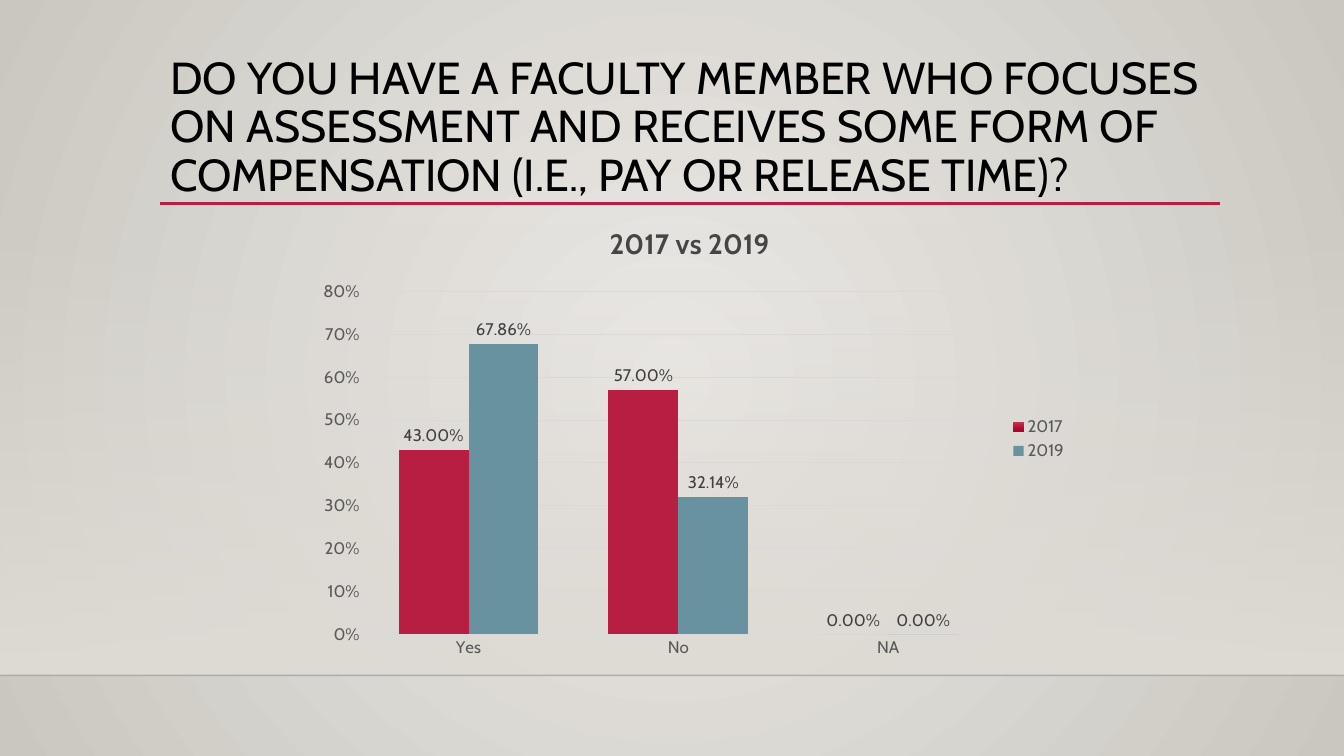
import pptx
import pptx.chart.data
import pptx.dml.color
import pptx.enum.chart
import pptx.enum.shapes
import pptx.enum.text
import pptx.oxml
import pptx.oxml.ns
import pptx.util
from pptx.util import Inches, Pt

QUESTION = ("DO YOU HAVE A FACULTY MEMBER WHO FOCUSES ON ASSESSMENT AND RECEIVES "
            "SOME FORM OF COMPENSATION (I.E., PAY OR RELEASE TIME)?")
CHART_TITLE = "2017 vs 2019"
ANSWERS = ["Yes", "No", "NA"]
SHARES = {"2017": [0.43, 0.57, 0], "2019": [0.6786, 0.3214, 0]}
FONT = "Cabin"
COLORS = {
    "red": "B71E42", "teal": "6892A0", "stone": "CCC6BC",
    "black": "000000", "heading": "454545", "axis": "595959",
    "label": "404040", "grid": "D9D9D9", "floor": "000001",
}
BACKDROP_STOPS = [(0, "ECEAE7", 100), (100, "CAC7C1", 100)]
BAND_STOPS = [(0, "DFDBD5", 0), (100, "DFDBD5", 100)]
RED_STOPS = [(0, "C7304C", 100), (69, "B3062F", 100), (100, "AA062C", 100)]
DOWNWARD = '<a:lin ang="5400000" scaled="0"/>'
RADIAL = ('<a:path path="circle"><a:fillToRect l="50000" t="50000" '
          'r="50000" b="50000"/></a:path>')
PLOT_AREA = {"x": 0.08, "y": 0.187, "w": 0.811, "h": 0.728}
NS = pptx.oxml.ns.nsdecls("a")


def rgb(name):
    return pptx.dml.color.RGBColor.from_string(COLORS[name])


def style(font, size, color, bold=False):
    font.name = FONT
    font.size = Pt(size)
    font.bold = bold
    font.color.rgb = rgb(color)


def paint(fill, color):
    fill.solid()
    fill.fore_color.rgb = rgb(color)


def gradient(fill, owner, stops, shading):
    fill.gradient()
    holder = next(owner.iter(pptx.oxml.ns.qn("a:gradFill")))
    for child in list(holder):
        holder.remove(child)
    stop_xml = "".join(
        f'<a:gs pos="{place * 1000}"><a:srgbClr val="{color}">'
        f'<a:alpha val="{opacity * 1000}"/></a:srgbClr></a:gs>'
        for place, color, opacity in stops)
    for child in pptx.oxml.parse_xml(
            f"<a:gradFill {NS}><a:gsLst>{stop_xml}</a:gsLst>{shading}</a:gradFill>"):
        holder.append(child)


def rule(slide, left, right, y, color, width, opacity=100):
    connector = slide.shapes.add_connector(
        pptx.enum.shapes.MSO_CONNECTOR.STRAIGHT,
        Inches(left), Inches(y), Inches(right), Inches(y))
    connector.line.width = Pt(width)
    connector.line.color.rgb = rgb(color)
    properties = connector.element.spPr
    tint = next(properties.iter(pptx.oxml.ns.qn("a:srgbClr")))
    tint.append(pptx.oxml.parse_xml(f'<a:alpha {NS} val="{opacity * 1000}"/>'))
    properties.append(pptx.oxml.parse_xml(f"<a:effectLst {NS}/>"))


def add_backdrop(slide):
    gradient(slide.background.fill, slide.element, BACKDROP_STOPS, RADIAL)
    band = slide.shapes.add_shape(
        pptx.enum.shapes.MSO_SHAPE.RECTANGLE,
        Inches(0), Inches(2.21), Inches(13.33), Inches(4.49))
    band.shadow.inherit = False
    band.line.fill.background()
    gradient(band.fill, band.element.spPr, BAND_STOPS, DOWNWARD)
    rule(slide, 0, 13.33, 6.7, "floor", 1, 20)
    rule(slide, 1.59, 12.1, 2.02, "red", 2.5)


def add_question(slide):
    question = slide.shapes.title
    question.left, question.top = Inches(1.59), Inches(0.5)
    question.width, question.height = Inches(10.5), Inches(1.79)
    frame = question.text_frame
    frame.text = QUESTION
    frame.word_wrap = True
    frame.auto_size = pptx.enum.text.MSO_AUTO_SIZE.NONE
    frame.vertical_anchor = pptx.enum.text.MSO_ANCHOR.TOP
    paragraph = frame.paragraphs[0]
    paragraph.alignment = pptx.enum.text.PP_ALIGN.LEFT
    paragraph.line_spacing = 0.9
    style(paragraph.font, 32, "black")


def add_comparison(slide):
    data = pptx.chart.data.CategoryChartData(number_format="0.00%")
    data.categories = ANSWERS
    for year, shares in SHARES.items():
        data.add_series(year, shares)
    chart = slide.shapes.add_chart(
        pptx.enum.chart.XL_CHART_TYPE.COLUMN_CLUSTERED,
        Inches(2.99), Inches(2.02), Inches(7.7), Inches(4.67), data).chart
    style(chart.font, 10, "black")

    chart.has_title = True
    heading = chart.chart_title
    heading.text_frame.text = CHART_TITLE
    style(heading.text_frame.paragraphs[0].font, 20, "heading", True)
    heading.include_in_layout = False

    chart.has_legend = True
    chart.legend.position = pptx.enum.chart.XL_LEGEND_POSITION.RIGHT
    chart.legend.include_in_layout = False
    style(chart.legend.font, 12, "axis")

    for axis in (chart.category_axis, chart.value_axis):
        axis.major_tick_mark = pptx.enum.chart.XL_TICK_MARK.NONE
        axis.minor_tick_mark = pptx.enum.chart.XL_TICK_MARK.NONE
        style(axis.tick_labels.font, 12, "axis")
    chart.category_axis.format.line.width = Pt(1)
    chart.category_axis.format.line.color.rgb = rgb("grid")
    shares_axis = chart.value_axis
    shares_axis.minimum_scale, shares_axis.maximum_scale = 0, 0.8
    shares_axis.major_unit = 0.1
    shares_axis.tick_labels.number_format = "0%"
    shares_axis.tick_labels.number_format_is_linked = False
    shares_axis.format.line.fill.background()
    shares_axis.major_gridlines.format.line.width = Pt(0.75)
    shares_axis.major_gridlines.format.line.color.rgb = rgb("grid")

    plot = chart.plots[0]
    plot.gap_width, plot.overlap = 100, 0
    plot.vary_by_categories = False
    earlier, later = plot.series
    gradient(earlier.format.fill, earlier.format.element
             if hasattr(earlier.format, "element") else chart.element,
             RED_STOPS, DOWNWARD)
    for index, color in enumerate(["red", "red", "stone"]):
        paint(earlier.points[index].format.fill, color)
    paint(later.format.fill, "teal")
    for series in plot.series:
        labels = series.data_labels
        labels.show_value = True
        labels.position = pptx.enum.chart.XL_LABEL_POSITION.OUTSIDE_END
        labels.number_format = "0.00%"
        labels.number_format_is_linked = False
        style(labels.font, 12, "label")

    area = next(chart.element.iter(pptx.oxml.ns.qn("c:plotArea")))
    for blank in area.findall(pptx.oxml.ns.qn("c:layout")):
        area.remove(blank)
    modes = '<c:xMode val="edge"/><c:yMode val="edge"/>'
    extent = "".join(f'<c:{side} val="{share}"/>' for side, share in PLOT_AREA.items())
    area.insert(0, pptx.oxml.parse_xml(
        f'<c:layout {pptx.oxml.ns.nsdecls("c")}><c:manualLayout>'
        f'<c:layoutTarget val="inner"/>{modes}{extent}</c:manualLayout></c:layout>'))


def main():
    deck = pptx.Presentation()
    deck.slide_width, deck.slide_height = Inches(13.33), Inches(7.5)
    slide = deck.slides.add_slide(deck.slide_layouts[5])
    add_backdrop(slide)
    add_question(slide)
    add_comparison(slide)
    deck.save("out.pptx")


if __name__ == "__main__":
    main()
